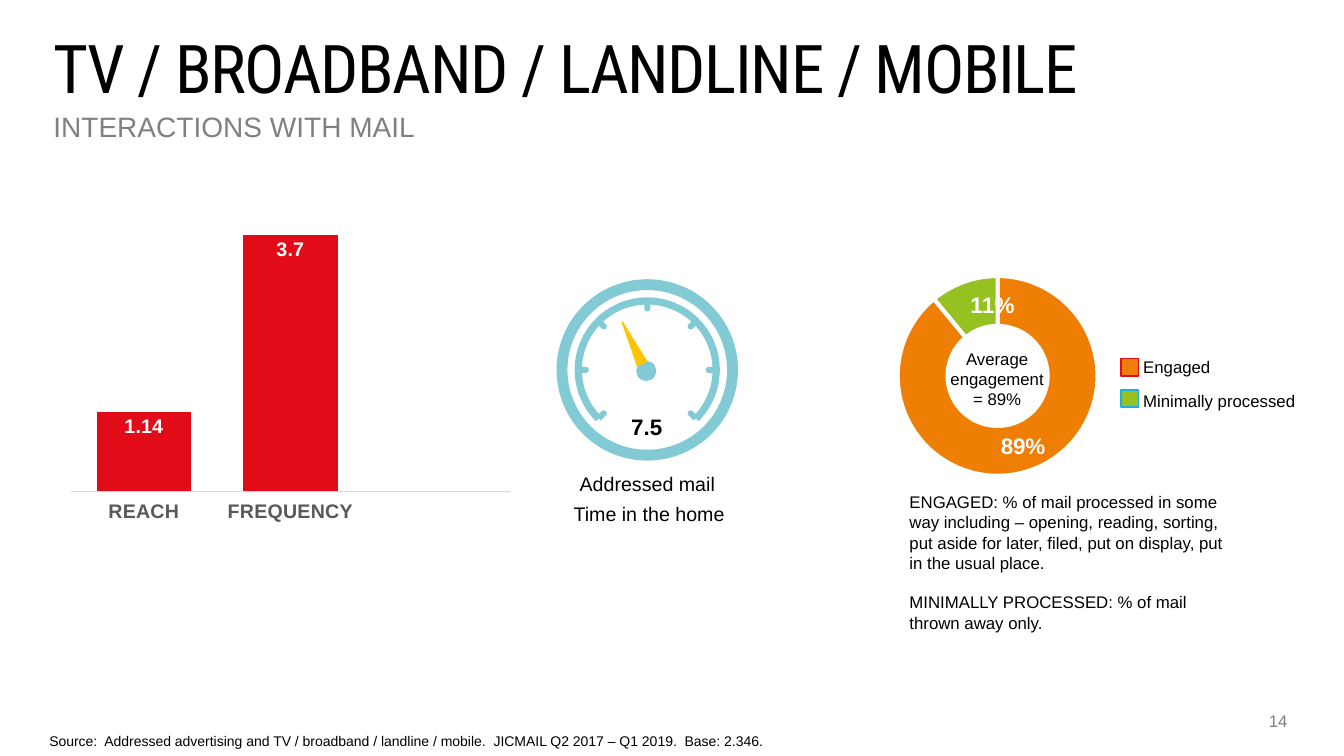
from dataclasses import dataclass
from math import cos, pi, radians, sin

from lxml.etree import SubElement
from pptx import Presentation
from pptx.chart.chart import Chart
from pptx.chart.data import CategoryChartData
from pptx.dml.color import RGBColor
from pptx.enum.chart import XL_CHART_TYPE, XL_LABEL_POSITION, XL_TICK_LABEL_POSITION, XL_TICK_MARK
from pptx.enum.shapes import MSO_SHAPE
from pptx.enum.text import MSO_ANCHOR, MSO_AUTO_SIZE, PP_ALIGN
from pptx.oxml import parse_xml
from pptx.oxml.ns import nsdecls, qn
from pptx.util import Inches, Pt

HUES = {
    "black": "000000", "white": "FFFFFF", "grey": "808080", "dark": "595959",
    "rule": "D9D9D9", "red": "E20C18", "teal": "82CBD4", "gold": "FDC304",
    "orange": "EF7E05", "green": "95C121", "blue": "1BACE4",
}
Box = tuple[float, float, float, float]


@dataclass
class Note:
    box: Box
    lines: list[str]
    size: int = 12
    hue: str = "black"
    bold: bool = False
    align: PP_ALIGN = PP_ALIGN.LEFT
    wrap: bool = False
    inset: bool = True
    gap: int = 0


@dataclass
class Key:
    top: float
    text: Note
    fill: str
    edge: str


def color(name: str) -> RGBColor:
    return RGBColor.from_string(HUES[name])


def style(font, size: float, hue: str, bold: bool = False, face: str = "Arial") -> None:
    font.name, font.size, font.bold = face, Pt(size), bold
    font.color.rgb = color(hue)


def write(note: Note) -> None:
    frame = slide.shapes.add_textbox(*map(Inches, note.box)).text_frame
    frame.word_wrap = note.wrap
    if note.inset:
        frame.auto_size = MSO_AUTO_SIZE.SHAPE_TO_FIT_TEXT
    else:
        frame.margin_left = frame.margin_right = frame.margin_top = frame.margin_bottom = 0
    for i, line in enumerate(note.lines):
        para = frame.paragraphs[0] if i == 0 else frame.add_paragraph()
        para.text, para.alignment = line, note.align
        if i:
            para.space_before = Pt(note.gap)
        style(para.font, note.size, note.hue, note.bold)


def paint(shape, fill: str, edge: str = ""):
    shape.shadow.inherit = False
    shape.fill.solid()
    shape.fill.fore_color.rgb = color(fill)
    if edge:
        shape.line.color.rgb = color(edge)
        shape.line.width = Pt(1)
    else:
        shape.line.fill.background()
    return shape


def draw(kind: MSO_SHAPE, box: Box, fill: str, edge: str = ""):
    return paint(slide.shapes.add_shape(kind, *map(Inches, box)), fill, edge)


def disc(kind: MSO_SHAPE, mid: tuple[float, float], rad: float):
    return draw(kind, (mid[0] - rad, mid[1] - rad, 2 * rad, 2 * rad), "teal")


def tick(mid: tuple[float, float], angle: float) -> None:
    """Bar on the dial pointing inwards, with a round tip."""
    far, near, half = 0.68, 0.61, 0.03
    tip = [(near - half * sin(pi * i / 8), half * cos(pi * i / 8)) for i in range(9)]
    turn = radians(angle)
    points = [
        (Inches(mid[0] + r * cos(turn) - s * sin(turn)),
         Inches(mid[1] + r * sin(turn) + s * cos(turn)))
        for r, s in [(far, half), *tip, (far, -half)]
    ]
    form = slide.shapes.build_freeform(*points[0])
    form.add_line_segments(points[1:])
    paint(form.convert_to_shape(), "teal")


def layout(inner: str) -> object:
    return parse_xml(f'<c:layout {nsdecls("c")}><c:manualLayout>{inner}</c:manualLayout></c:layout>')


def chart(kind: XL_CHART_TYPE, box: Box, cats: list[str], vals: list, fmt: str, area: Box) -> Chart:
    data = CategoryChartData(number_format=fmt)
    data.categories = cats
    data.add_series("Series 1", vals)
    made = slide.shapes.add_chart(kind, *map(Inches, box), data).chart
    made.has_legend = made.has_title = False
    style(made.font, 10, "black")
    # Fixed plot area
    plot = made._chartSpace.chart.plotArea
    for old in plot.findall(qn("c:layout")):
        plot.remove(old)
    sizes = "".join(f'<c:{n} val="{v}"/>' for n, v in zip("xywh", area))
    plot.insert(0, layout('<c:layoutTarget val="inner"/><c:xMode val="edge"/>'
                          f'<c:yMode val="edge"/>{sizes}'))
    return made


def labels(made: Chart, size: int, fmt: str):
    plot = made.plots[0]
    plot.has_data_labels = False
    tags = plot.series[0].data_labels
    tags.show_value = True
    tags.number_format, tags.number_format_is_linked = fmt, False
    style(tags.font, size, "white", True)
    return tags


def bars() -> None:
    made = chart(XL_CHART_TYPE.COLUMN_CLUSTERED, (0.61, 2.06, 4.54, 3.16),
                 ["REACH", "FREQUENCY", ""], [1.14, 3.7, None], "General",
                 (0.02, 0.02, 0.96, 0.87))
    plot = made.plots[0]
    plot.gap_width, plot.vary_by_categories = 55, False
    fill = plot.series[0].format.fill
    fill.solid()
    fill.fore_color.rgb = color("red")
    labels(made, 14, "General").position = XL_LABEL_POSITION.INSIDE_END
    axis = made.category_axis
    axis.major_tick_mark = XL_TICK_MARK.NONE
    axis.tick_label_position = XL_TICK_LABEL_POSITION.LOW
    axis.format.line.color.rgb = color("rule")
    axis.format.line.width = Pt(0.75)
    style(axis.tick_labels.font, 14, "dark", True)
    scale = made.value_axis
    scale.minimum_scale, scale.maximum_scale = 0, 4
    scale.has_major_gridlines = scale.visible = False


def ring() -> None:
    made = chart(XL_CHART_TYPE.DOUGHNUT, (8.23, 2.49, 3.33, 2.48), ["1", "2"],
                 [0.89, 0.11], "0%", (0.2, 0.1, 0.6, 0.8))
    plot = made.plots[0]
    hole = plot._element.find(qn("c:holeSize"))
    if hole is None:
        hole = SubElement(plot._element, qn("c:holeSize"))
    hole.set("val", "50")
    labels(made, 16, "0%")
    for i, hue in enumerate(["orange", "green"]):
        form = plot.series[0].points[i].format
        form.fill.solid()
        form.fill.fore_color.rgb = color(hue)
        form.line.color.rgb = color("white")
        form.line.width = Pt(3)
    # Small slice: label moved to the right
    style(plot.series[0].points[1].data_label.font, 16, "white", True)
    index = plot.series[0]._element.find(".//" + qn("c:dLbl")).find(qn("c:idx"))
    index.addnext(parse_xml(f'<c:numFmt {nsdecls("c")} formatCode="0%" sourceLinked="0"/>'))
    index.addnext(layout('<c:x val="0.06"/><c:y val="0"/>'))


def gauge() -> None:
    mid = (6.42, 3.67)
    disc(MSO_SHAPE.DONUT, mid, 0.9).adjustments[0] = 0.06
    arc = disc(MSO_SHAPE.BLOCK_ARC, mid, 0.72)
    # Angles count in 60000ths of a degree, adjustments in 100000ths
    for i, value in enumerate([135 * 0.6, 45 * 0.6, 0.05]):
        arc.adjustments[i] = value
    for angle in range(135, 406, 45):
        tick(mid, angle)
    disc(MSO_SHAPE.OVAL, (6.41, 3.68), 0.1)
    draw(MSO_SHAPE.ISOSCELES_TRIANGLE, (6.22, 3.17, 0.1, 0.46), "gold", "gold").rotation = 334.6


deck = Presentation()
deck.slide_width, deck.slide_height = Inches(13.33), Inches(7.5)
slide = deck.slides.add_slide(deck.slide_layouts[5])

# Title
title = slide.shapes.title
title.left, title.top, title.width, title.height = map(Inches, (0.53, 0.45, 12.2, 0.52))
head = title.text_frame
head.margin_left = head.margin_right = head.margin_top = head.margin_bottom = 0
head.auto_size, head.vertical_anchor = MSO_AUTO_SIZE.NONE, MSO_ANCHOR.TOP
line = head.paragraphs[0]
line.text, line.alignment, line.line_spacing = "TV / BROADBAND / LANDLINE / MOBILE", PP_ALIGN.LEFT, Pt(44)
style(line.font, 48, "black", face="Roboto Condensed")
line.runs[0].font._element.set("spc", "-100")

# Charts and dial
bars()
gauge()
ring()

# Texts
mid = PP_ALIGN.CENTER
notes = [
    Note((12.3, 7.05, 0.47, 0.2), ["14"], hue="grey", align=PP_ALIGN.RIGHT, wrap=True, inset=False),
    Note((0.53, 1.09, 12.23, 0.29), ["INTERACTIONS WITH MAIL"], 20, "grey", wrap=True, inset=False),
    Note((6.16, 4.05, 0.51, 0.37), ["7.5"], 16, bold=True, align=mid),
    Note((5.65, 4.63, 1.55, 0.34), ["Addressed mail"], 14),
    Note((5.59, 4.93, 1.71, 0.34), ["Time in the home"], 14),
    Note((9.02, 4.88, 3.28, 0.81), [
        "ENGAGED: % of mail processed in some way including – opening, reading, sorting, "
        "put aside for later, filed, put on display, put in the usual place.",
        "MINIMALLY PROCESSED: % of mail thrown away only."], wrap=True, inset=False, gap=14),
    Note((9.28, 3.41, 1.22, 0.71), ["Average engagement = 89%"], align=mid, wrap=True),
    Note((0.39, 7.22, 7.38, 0.27), ["Source:  Addressed advertising and TV / broadband / landline / "
                                    "mobile.  JICMAIL Q2 2017 – Q1 2019.  Base: 2.346."], 10),
]
for note in notes:
    write(note)

# Legend
keys = [
    Key(3.56, Note((11.24, 3.49, 0.87, 0.3), ["Engaged"]), "orange", "red"),
    Key(3.87, Note((11.24, 3.83, 1.72, 0.3), ["Minimally processed"]), "green", "blue"),
]
for key in keys:
    draw(MSO_SHAPE.RECTANGLE, (11.12, key.top, 0.17, 0.17), key.fill, key.edge)
    write(key.text)

deck.save("out.pptx")
